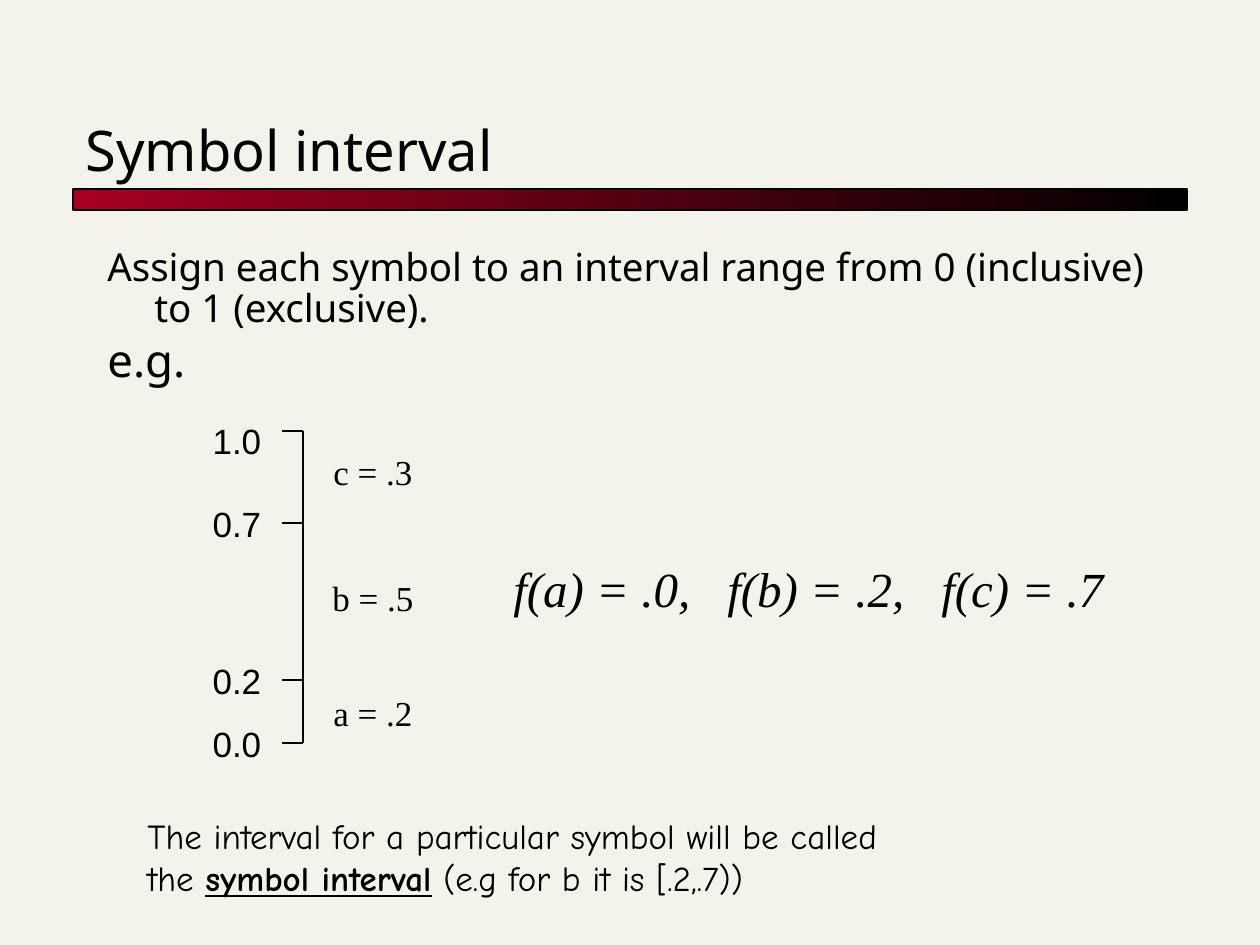
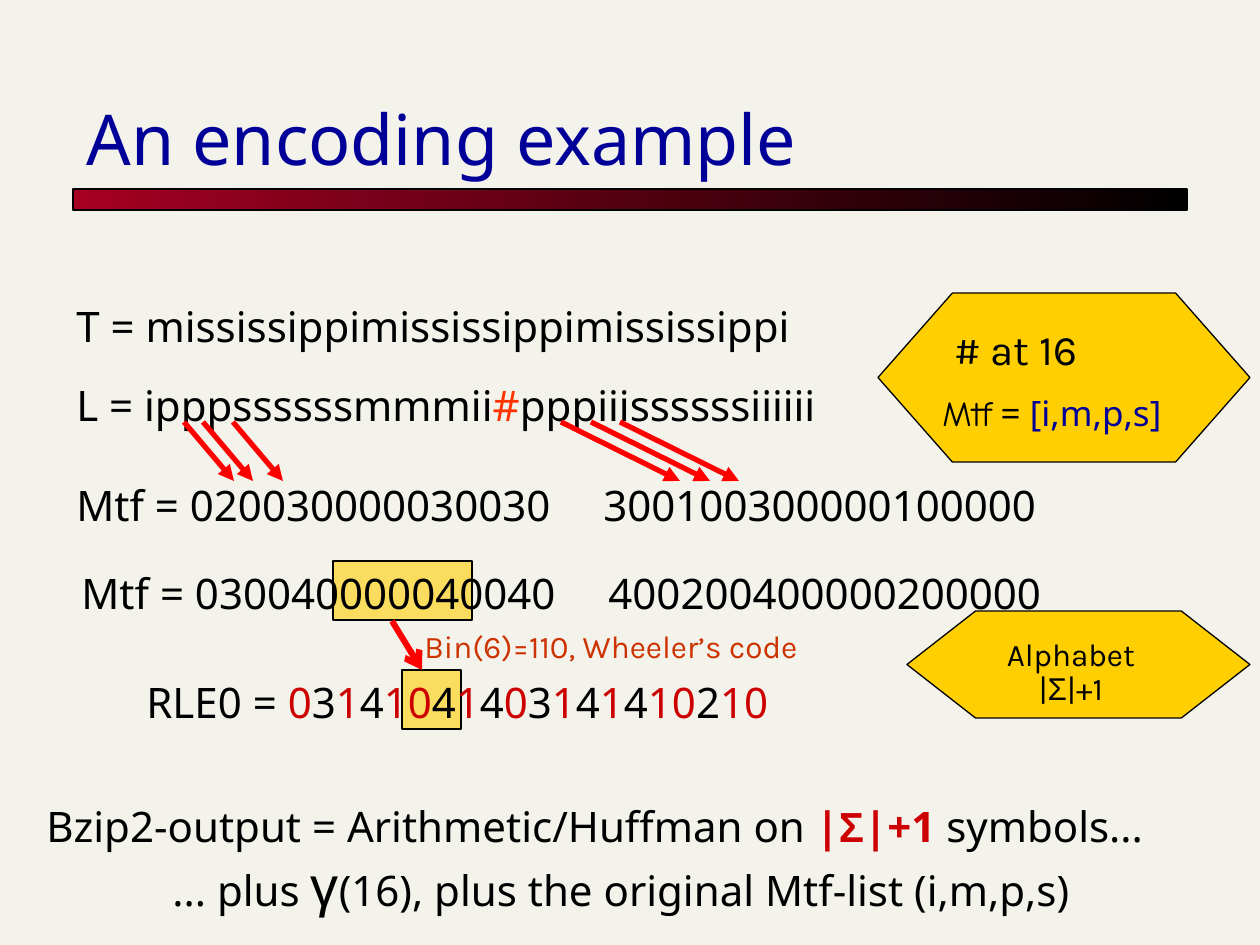
import itertools
from dataclasses import dataclass, field

import pptx
import pptx.util
import pptx.dml.color
import pptx.enum.shapes
import pptx.enum.text
import pptx.oxml
import pptx.oxml.ns
import lxml.etree

SHAPE = pptx.enum.shapes.MSO_SHAPE
ALIGN = pptx.enum.text.PP_ALIGN
ANCHOR = pptx.enum.text.MSO_ANCHOR
PX_PER_INCH = 126


@dataclass(frozen=True)
class Theme:
    paper: str = "F4F3EB"
    ink: str = "000000"
    wine: str = "A50021"
    gold: str = "FFCF01"
    navy: str = "000099"
    crimson: str = "CC0000"
    orange: str = "FF3300"
    rust: str = "CC3300"
    arrow: str = "FF0000"
    hairline: float = 0.75
    styles: dict = field(default_factory=lambda: {
        "title": {"name": "Noto Sans", "size": 32},
        "big title": {"name": "Noto Sans", "size": 40},
        "lead": {"name": "Noto Sans", "size": 22},
        "lead large": {"name": "Noto Sans", "size": 26},
        "symbol": {"name": "Times New Roman", "size": 20},
        "level": {"name": "Arial", "size": 20},
        "formula": {"name": "Times New Roman", "size": 28, "italic": True},
        "remark": {"name": "Comic Neue", "size": 20},
        "term": {"name": "Comic Neue", "size": 20, "bold": True, "underline": True},
        "code": {"name": "Noto Sans", "size": 24},
        "strong": {"name": "Noto Sans", "size": 24, "bold": True},
        "strong greek": {"name": "Arial", "size": 24, "bold": True},
        "large greek": {"name": "Arial", "size": 32},
        "list": {"name": "Noto Sans", "size": 20},
        "position": {"name": "Karla", "size": 24},
        "note": {"name": "Karla", "size": 18},
        "note greek": {"name": "Arial", "size": 18},
    })


THEME = Theme()


# Shared helpers
def px(length):
    return pptx.util.Emu(round(length * 914400 / PX_PER_INCH))


def rgb(code):
    return pptx.dml.color.RGBColor.from_string(code)


def sub(parent, tag, **attributes):
    return lxml.etree.SubElement(parent, pptx.oxml.ns.qn(tag), **attributes)


def add_text(slide, box, paragraphs, anchor=ANCHOR.TOP, tabs=(), hanging=0, **layout):
    """Each paragraph is a list of (text, style[, colour]) runs."""
    frame = slide.shapes.add_textbox(*map(px, box)).text_frame
    frame.word_wrap = True
    frame.vertical_anchor = anchor
    for index, runs in enumerate(paragraphs):
        paragraph = frame.paragraphs[0] if index == 0 else frame.add_paragraph()
        for name, value in layout.items():
            setattr(paragraph, name, value)
        properties = paragraph._p.get_or_add_pPr()
        if hanging:
            properties.set("marL", str(px(hanging)))
            properties.set("indent", str(-px(hanging)))
        if tabs:
            stops = sub(properties, "a:tabLst")
            for stop in tabs:
                sub(stops, "a:tab", pos=str(px(stop)), algn="l")
        for text, style, *colour in runs:
            for number, line in enumerate(text.split("\n")):
                if number:
                    paragraph.add_line_break()
                run = paragraph.add_run()
                run.text = line
                for name, value in THEME.styles[style].items():
                    setattr(run.font, name, pptx.util.Pt(value) if name == "size" else value)
                run.font.color.rgb = rgb(colour[0] if colour else THEME.ink)


def add_panel(slide, box, kind=SHAPE.RECTANGLE, opacity=100):
    panel = slide.shapes.add_shape(kind, *map(px, box))
    panel.shadow.inherit = False
    panel.fill.solid()
    panel.fill.fore_color.rgb = rgb(THEME.gold)
    if opacity < 100:
        colour = panel._element.spPr.find(".//" + pptx.oxml.ns.qn("a:srgbClr"))
        sub(colour, "a:alpha", val=str(opacity * 1000))
    panel.line.color.rgb = rgb(THEME.ink)
    panel.line.width = pptx.util.Pt(THEME.hairline)
    return panel


def add_line(slide, start, end, colour=THEME.ink, width=THEME.hairline, head=None):
    line = slide.shapes.add_connector(
        pptx.enum.shapes.MSO_CONNECTOR.STRAIGHT, *map(px, (*start, *end)))
    line.line.color.rgb = rgb(colour)
    line.line.width = pptx.util.Pt(width)
    if head:
        sub(line.line._get_or_add_ln(), "a:tailEnd", type=head)
    sub(line._element.spPr, "a:effectLst")


def start_slide(deck, title_box, title, style, colour=THEME.ink):
    slide = deck.slides.add_slide(deck.slide_layouts[6])
    slide.background.fill.solid()
    slide.background.fill.fore_color.rgb = rgb(THEME.paper)
    # Band below the title
    band = add_panel(slide, (73, 189, 1114, 21))
    band.fill.gradient()
    band.fill.gradient_angle = 0
    for stop, shade in zip(band.fill.gradient_stops, (THEME.wine, THEME.ink)):
        stop.color.rgb = rgb(shade)
    add_text(slide, title_box, [[(title, style, colour)]], ANCHOR.BOTTOM)
    return slide


# Slide 1: symbol interval
def add_interval_scale(slide, box):
    left, top, width, height = box
    axis = left + 105
    label_height = 63
    add_line(slide, (axis, top + height), (axis, top))
    # Ticks with their levels: text, tick, middle of the text
    for level, tick, middle in (("0.0", 312, 312), ("0.2", 249, 249),
                                ("0.7", 92, 92), ("1.0", 0, 9)):
        add_line(slide, (axis, top + tick), (axis - 21, top + tick))
        add_text(slide, (left, top + middle - label_height // 2, 78, label_height),
                 [[(level, "level")]], ANCHOR.MIDDLE, alignment=ALIGN.CENTER)
    # Probability of each symbol
    for symbol, middle in (("a = .2", 281), ("b = .5", 166), ("c = .3", 40)):
        add_text(slide, (axis + 10, top + middle - label_height // 2, width - 115, label_height),
                 [[(symbol, "symbol")]], ANCHOR.MIDDLE, alignment=ALIGN.CENTER)


def build_symbol_interval(deck):
    slide = start_slide(deck, (73, 53, 1113, 136), "Symbol interval", "title")
    add_text(slide, (95, 242, 1071, 220), [
        [("Assign each symbol to an interval range from 0 (inclusive) to 1 (exclusive).", "lead")],
        [("e.g.", "lead large")],
    ], hanging=47, line_spacing=0.9, space_before=pptx.util.Pt(4))
    add_interval_scale(slide, (198, 431, 235, 312))
    add_text(slide, (501, 552, 640, 72), [[("f(a) = .0,\tf(b) = .2,\tf(c) = .7", "formula")]],
             ANCHOR.MIDDLE, tabs=(214, 428))
    add_text(slide, (135, 800, 988, 113), [[
        ("The interval for a particular symbol will be called\nthe ", "remark"),
        ("symbol interval", "term"),
        (" (e.g for b it is [.2,.7))", "remark"),
    ]], ANCHOR.MIDDLE)


# Slide 2: encoding example
def add_encoding_steps(slide, box):
    left, top, width, row_height = box
    # Marked run of zeros and its code, behind the digits
    add_panel(slide, (left + 269, top + 267, 139, 59), opacity=60)
    add_panel(slide, (left + 338, top + 376, 59, 59), opacity=60)
    # Binary digits of the run-length code stand out
    rle = [("RLE0 = ", "code")] + [
        ("".join(digits), "code", THEME.crimson if binary else THEME.ink)
        for binary, digits in itertools.groupby("03141041403141410210", lambda d: d in "01")]
    rows = (
        (0, 0, [("T = mississippimississippimississippi", "code")]),
        (0, 79, [("L = ipppssssssmmmii", "code"), ("#", "code", THEME.orange),
                 ("pppiiissssssiiiiii", "code")]),
        (0, 179, [("Mtf = 020030000030030\t300100300000100000", "code")]),
        (5, 267, [("Mtf = 030040000040040\t400200400000200000", "code")]),
        (70, 376, rle),
    )
    for indent, offset, runs in rows:
        add_text(slide, (left + indent, top + offset, width - indent, row_height),
                 [runs], tabs=(527,))
    # Letters of L to their Mtf codes
    for starts, shift in (((120, 139, 169), 50), ((497, 527, 556), 119)):
        for start in starts:
            add_line(slide, (left + start, top + 128), (left + start + shift, top + 187),
                     THEME.arrow, 3, "triangle")
    # Run of zeros to its code
    add_line(slide, (left + 328, top + 327), (left + 358, top + 376), THEME.arrow, 3.5, "arrow")
    add_text(slide, (left + 348, top + 327, 415, 50),
             [[("Bin(6)=110, Wheeler’s code", "note", THEME.rust)]])


def add_start_list(slide, box):
    left, top, width, height = box
    add_panel(slide, box, SHAPE.FLOWCHART_PREPARATION)
    add_text(slide, (left + 52, top + 92, 273, 54),
             [[("Mtf", "remark"), (" = ", "list"), ("[i,m,p,s]", "list", THEME.navy)]])
    add_text(slide, (left + 64, top + 24, 164, 63), [[("# at 16", "position")]])


def add_alphabet(slide, box):
    left, top, width, height = box
    add_panel(slide, box, SHAPE.FLOWCHART_PREPARATION)
    add_text(slide, (left + 82, top + 22, 164, 81), [
        [("Alphabet", "note")],
        [("|", "note"), ("Σ", "note greek"), ("|+1", "note")],
    ], alignment=ALIGN.CENTER, line_spacing=0.9)


def build_encoding_example(deck):
    slide = start_slide(deck, (74, 86, 1071, 100), "An encoding example", "big title", THEME.navy)
    add_encoding_steps(slide, (64, 294, 1123, 63))
    add_start_list(slide, (878, 293, 372, 169))
    add_alphabet(slide, (907, 611, 343, 107))
    # Resulting output
    add_text(slide, (34, 794, 1180, 130), [
        [("Bzip2-output = Arithmetic/Huffman on ", "code"), ("|", "strong", THEME.crimson),
         ("Σ", "strong greek", THEME.crimson), ("|+1", "strong", THEME.crimson),
         (" symbols...", "code")],
        [("\t... plus ", "code"), ("γ", "large greek"),
         ("(16), plus the original Mtf-list (i,m,p,s)", "code")],
    ], tabs=(126,))


def main():
    deck = pptx.Presentation()
    deck.slide_width, deck.slide_height = px(1260), px(945)
    build_symbol_interval(deck)
    build_encoding_example(deck)
    deck.save("out.pptx")


if __name__ == "__main__":
    main()
